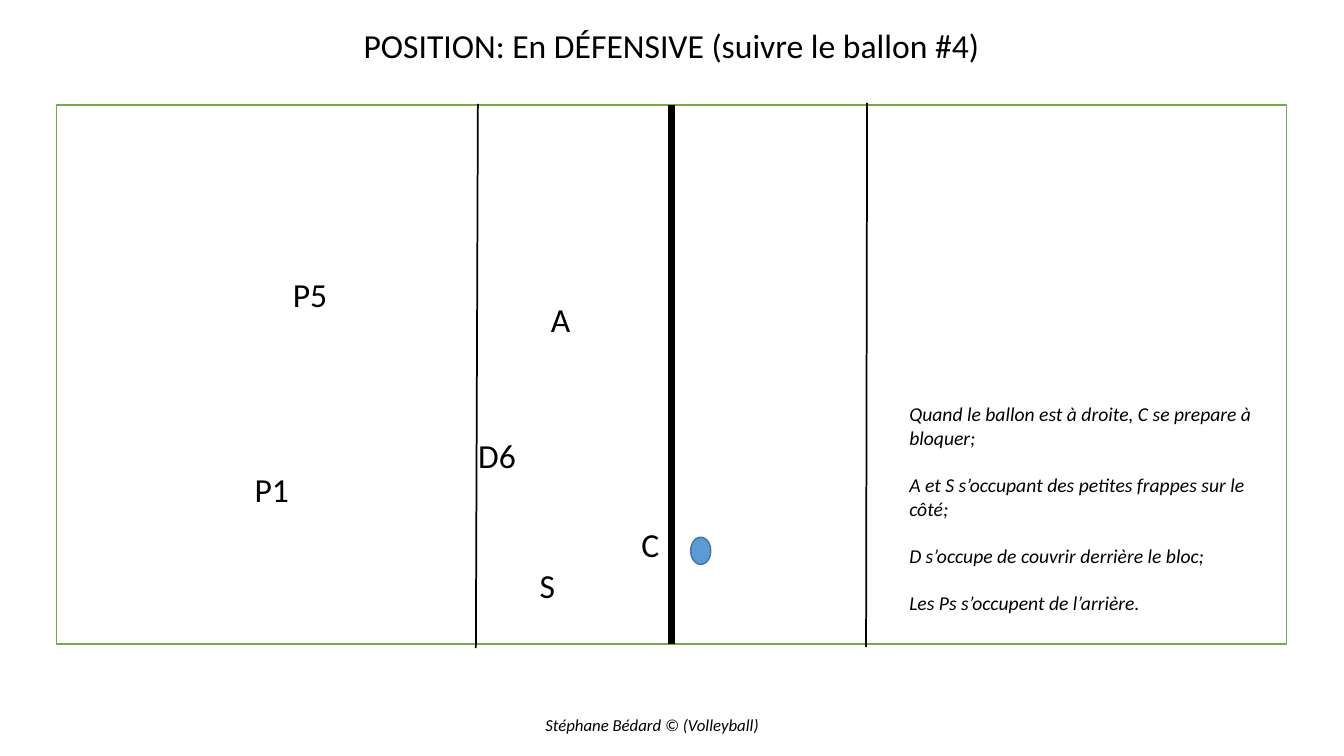
from dataclasses import dataclass

from lxml import etree
from pptx import Presentation
from pptx.dml.color import RGBColor
from pptx.enum.shapes import MSO_CONNECTOR, MSO_SHAPE
from pptx.enum.text import MSO_AUTO_SIZE, PP_ALIGN
from pptx.oxml.ns import qn
from pptx.slide import Slide
from pptx.util import Inches, Pt

LEFT, CENTER = PP_ALIGN.LEFT, PP_ALIGN.CENTER
RECT, OVAL = MSO_SHAPE.RECTANGLE, MSO_SHAPE.OVAL
STRAIGHT = MSO_CONNECTOR.STRAIGHT
GROW, FIXED = MSO_AUTO_SIZE.SHAPE_TO_FIT_TEXT, MSO_AUTO_SIZE.NONE


@dataclass(frozen=True)
class Theme:
    font: str = "Calibri"
    ink: str = "000000"
    paper: str = "FFFFFF"
    border: str = "70AD47"
    ball: str = "5B9BD5"
    rim: str = "43739E"
    large: float = 24
    note: float = 14
    small: float = 12
    gap: float = 17


@dataclass(frozen=True)
class Box:
    left: float
    top: float
    width: float
    height: float


@dataclass(frozen=True)
class Text:
    box: Box
    lines: tuple[str, ...]
    size: float
    align: PP_ALIGN = CENTER
    italic: bool = False
    wrap: bool = False
    fit: MSO_AUTO_SIZE = GROW
    space: float = 1


@dataclass(frozen=True)
class Form:
    kind: MSO_SHAPE
    box: Box
    fill: str
    line: str


@dataclass(frozen=True)
class Rule:
    x1: float
    y1: float
    x2: float
    y2: float
    width: float


@dataclass(frozen=True)
class Player:
    name: str
    left: float
    top: float
    width: float


THEME = Theme()
COURT = Form(RECT, Box(0.56, 1.04, 12.2, 5.35), THEME.paper, THEME.border)
BALL = Form(OVAL, Box(6.85, 5.33, 0.2, 0.27), THEME.ball, THEME.rim)

RULES = (
    Rule(6.66, 1.04, 6.66, 6.39, 4.5),
    Rule(4.74, 1.03, 4.72, 6.43, 1.25),
    Rule(8.6, 1.02, 8.59, 6.42, 1.25),
)

PLAYERS = (
    Player("C", 6.26, 5.15, 0.38),
    Player("A", 5.36, 2.92, 0.4),
    Player("S", 5.25, 5.56, 0.36),
    Player("D6", 4.64, 4.27, 0.58),
    Player("P5", 2.8, 2.67, 0.55),
    Player("P1", 2.42, 4.6, 0.55),
)

TITLE = Text(
    Box(1.66, 0.24, 10, 0.47),
    ("POSITION: En DÉFENSIVE (suivre le ballon #4)",),
    THEME.large, wrap=True, fit=FIXED, space=0.9,
)
CREDIT = Text(
    Box(5.31, 7.04, 2.33, 0.3),
    ("Stéphane Bédard © (Volleyball)",),
    THEME.small, LEFT, italic=True,
)
NOTES = Text(
    Box(8.92, 3.94, 3.86, 2.46),
    (
        "Quand le ballon est à droite, C se prepare à bloquer;",
        "A et S s’occupant des petites frappes sur le côté;",
        "D s’occupe de couvrir derrière le bloc;",
        "Les Ps s’occupent de l’arrière.",
    ),
    THEME.note, LEFT, italic=True, wrap=True,
)


def color(code: str) -> RGBColor:
    return RGBColor.from_string(code)


def place(box: Box) -> tuple[Inches, ...]:
    return tuple(Inches(n) for n in (box.left, box.top, box.width, box.height))


def draw_form(slide: Slide, form: Form) -> None:
    shape = slide.shapes.add_shape(form.kind, *place(form.box))
    shape.shadow.inherit = False
    shape.fill.solid()
    shape.fill.fore_color.rgb = color(form.fill)
    shape.line.color.rgb = color(form.line)
    shape.line.width = Pt(1)


def draw_rule(slide: Slide, rule: Rule) -> None:
    ends = (Inches(n) for n in (rule.x1, rule.y1, rule.x2, rule.y2))
    line = slide.shapes.add_connector(STRAIGHT, *ends)
    line.line.color.rgb = color(THEME.ink)
    line.line.width = Pt(rule.width)
    etree.SubElement(line._element.spPr, qn("a:effectLst"))


def draw_text(slide: Slide, text: Text) -> None:
    frame = slide.shapes.add_textbox(*place(text.box)).text_frame
    frame.word_wrap = text.wrap
    frame.auto_size = text.fit
    for index, words in enumerate(text.lines):
        para = frame.add_paragraph() if index else frame.paragraphs[0]
        para.text = words
        para.alignment = text.align
        para.line_spacing = text.space
        if index:
            para.space_before = Pt(THEME.gap)
        font = para.font
        font.name = THEME.font
        font.size = Pt(text.size)
        font.italic = text.italic
        font.color.rgb = color(THEME.ink)


def draw_player(slide: Slide, player: Player) -> None:
    box = Box(player.left, player.top, player.width, 0.5)
    draw_text(slide, Text(box, (player.name,), THEME.large))


def main() -> None:
    deck = Presentation()
    deck.slide_width = Inches(13.33)
    deck.slide_height = Inches(7.5)
    slide = deck.slides.add_slide(deck.slide_layouts[6])
    draw_form(slide, COURT)
    draw_text(slide, TITLE)
    draw_text(slide, CREDIT)
    for rule in RULES:
        draw_rule(slide, rule)
    for player in PLAYERS:
        draw_player(slide, player)
    draw_form(slide, BALL)
    draw_text(slide, NOTES)
    deck.save("out.pptx")


if __name__ == "__main__":
    main()
